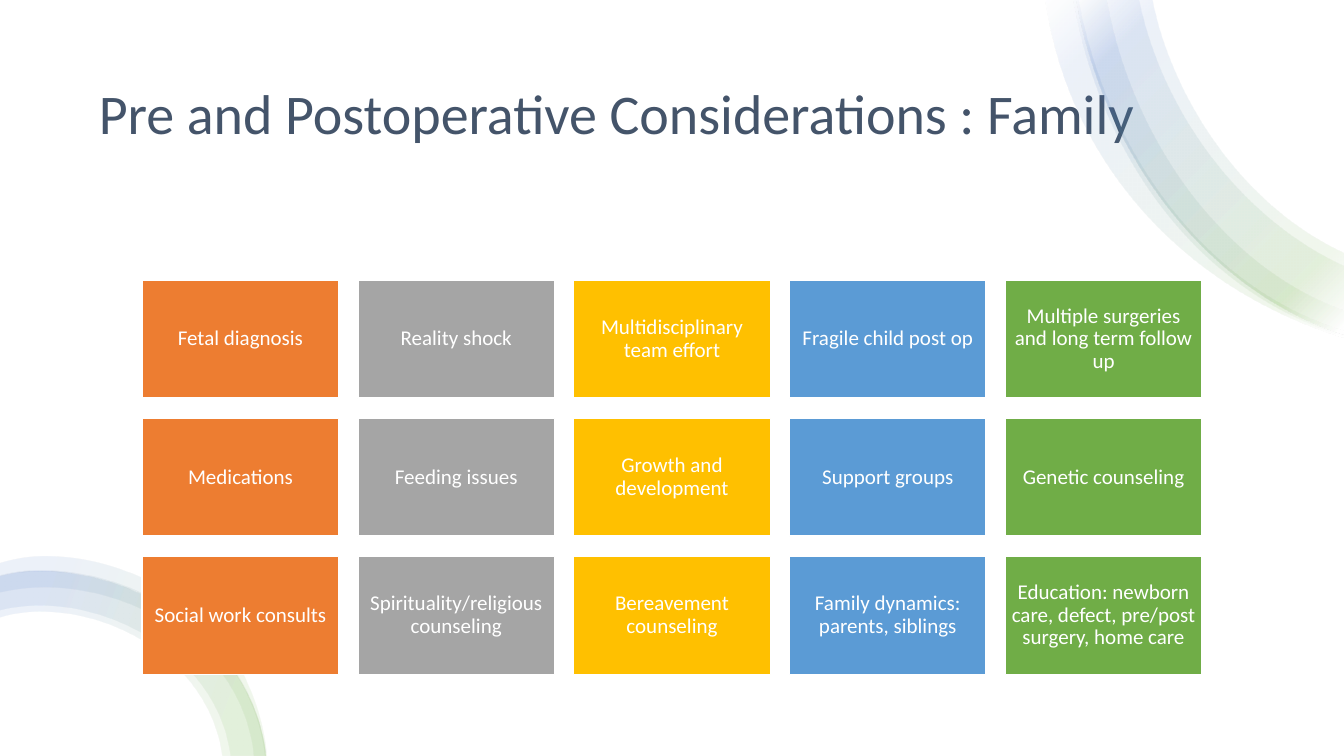
from dataclasses import dataclass

from lxml.etree import SubElement
from pptx import Presentation
from pptx.dml.color import RGBColor
from pptx.enum.shapes import MSO_SHAPE
from pptx.enum.text import MSO_ANCHOR, PP_ALIGN
from pptx.oxml.ns import qn
from pptx.util import Inches, Pt


@dataclass(frozen=True)
class Theme:
    """Colours, fonts and type sizes of the slide."""

    font: str = "Calibri"
    title_size: int = 40
    box_size: int = 15
    title_color: str = "44546A"
    white: str = "FFFFFF"
    columns: tuple = ("ED7D31", "A5A5A5", "FFC000", "5B9BD5", "70AD47")
    fading_stops: tuple = ((2, "FFFFFF"), (16, "70AD47"), (85, "4472C4"), (100, "FFFFFF"))
    plain_stops: tuple = ((16, "70AD47"), (85, "4472C4"))
    ribbon_opacity: int = 10


THEME = Theme()
SLIDE_WIDTH, SLIDE_HEIGHT = 13.33, 7.5
GRID_LEFT, GRID_TOP = 1.41, 2.78
COLUMN_STEP, ROW_STEP = 2.14, 1.37
BOX_WIDTH, BOX_HEIGHT = 1.95, 1.17

CONSIDERATIONS = (
    ("Fetal diagnosis", "Reality shock", "Multidisciplinary team effort",
     "Fragile child post op", "Multiple surgeries and long term follow up"),
    ("Medications", "Feeding issues", "Growth and development",
     "Support groups", "Genetic counseling"),
    ("Social work consults", "Spirituality/religious counseling", "Bereavement counseling",
     "Family dynamics: parents, siblings",
     "Education: newborn care, defect, pre/post surgery, home care"),
)


def crest_edge(start_y, crest, handle_x, bend, end_x):
    """Return two joined curves that rise to a crest and fall to the slide's foot."""
    crest_x, crest_y = crest
    return ((0, start_y), (crest_x / 3, (start_y + 2 * crest_y) / 3),
            (crest_x * 2 / 3, crest_y), crest,
            (handle_x, crest_y), bend, (end_x, SLIDE_HEIGHT))


TOP_EDGE = ((10.68, 0), (10.92, 1.46), (11.93, 2.88), (13.33, 3.32))
TOP_RIBBONS = (
    (((10.37, 0), (10.6, 1.65), (11.79, 2.89), (13.33, 3.35)),
     ((10.7, 0), (10.94, 1.35), (11.84, 2.82), (13.33, 3.28))),
    (TOP_EDGE, ((11.43, 0), (11.63, 1), (12.34, 2.06), (13.33, 2.51))),
    (((10.65, 0), (10.91, 1.55), (11.89, 2.91), (13.33, 3.33)),
     ((10.98, 0), (11.22, 1.35), (12.1, 2.64), (13.33, 3.08))),
    (TOP_EDGE, ((11.3, 0), (11.52, 1.1), (12.3, 2.17), (13.33, 2.64))),
)

BOTTOM_EDGE = crest_edge(5.72, (0.4, 5.67), 1.46, (2.52, 6.44), 2.63)
BOTTOM_RIBBONS = (
    (BOTTOM_EDGE, crest_edge(6.13, (0.4, 6.07), 1.21, (2.08, 6.62), 2.2)),
    (BOTTOM_EDGE, crest_edge(6.06, (0.4, 6.01), 1.24, (2.17, 6.6), 2.28)),
    (crest_edge(5.71, (0.4, 5.66), 1.48, (2.52, 6.42), 2.63),
     crest_edge(5.88, (0.45, 5.83), 1.4, (2.41, 6.48), 2.51)),
    (crest_edge(5.59, (0.45, 5.52), 1.48, (2.52, 6.24), 2.64),
     crest_edge(5.72, (0.4, 5.67), 1.46, (2.51, 6.42), 2.62)),
)


def bend_segments(shape, edge_length):
    """Turn the straight runs along both edges into cubic curves."""
    outline = next(shape.element.iter(qn("a:path")))
    lines = outline.findall(qn("a:lnTo"))
    for edge in (lines[:edge_length - 1], lines[edge_length:]):
        for start in range(0, edge_length - 1, 3):
            curve = SubElement(outline, qn("a:cubicBezTo"))
            edge[start].addprevious(curve)
            for line in edge[start:start + 3]:
                curve.append(line[0])
                outline.remove(line)


def fill_ribbon(shape, stops, angle):
    """Give the shape a translucent gradient."""
    shape.fill.gradient()
    shape.fill.gradient_angle = angle
    stop_list = shape.element.spPr.find(qn("a:gradFill")).find(qn("a:gsLst"))
    for stop in list(stop_list):
        stop_list.remove(stop)
    for position, color in stops:
        stop = SubElement(stop_list, qn("a:gs"), pos=str(position * 1000))
        rgb = SubElement(stop, qn("a:srgbClr"), val=color)
        SubElement(rgb, qn("a:alpha"), val=str(THEME.ribbon_opacity * 1000))


def add_ribbon(slide, outer, inner, stops, angle):
    """Add a curved band between two edges."""
    points = [(Inches(x), Inches(y)) for x, y in outer + inner[::-1]]
    builder = slide.shapes.build_freeform(*points[0])
    builder.add_line_segments(points[1:], close=True)
    shape = builder.convert_to_shape()
    bend_segments(shape, len(outer))
    shape.shadow.inherit = False
    shape.line.fill.background()
    fill_ribbon(shape, stops, angle)


def write_text(shape, text, size, color, alignment):
    """Write one formatted run, centred vertically in the shape."""
    frame = shape.text_frame
    frame.word_wrap = True
    frame.vertical_anchor = MSO_ANCHOR.MIDDLE
    paragraph = frame.paragraphs[0]
    paragraph.alignment = alignment
    paragraph.line_spacing = 0.9
    run = paragraph.add_run()
    run.text = text
    run.font.name = THEME.font
    run.font.size = Pt(size)
    run.font.color.rgb = RGBColor.from_string(color)


def add_title(slide, text):
    """Place and fill the title placeholder."""
    title = slide.shapes.title
    title.left, title.top = Inches(0.88), Inches(0.5)
    title.width, title.height = Inches(11.57), Inches(1.3)
    write_text(title, text, THEME.title_size, THEME.title_color, PP_ALIGN.LEFT)


def add_box(slide, column, row, text):
    """Add one consideration at its grid cell."""
    box = slide.shapes.add_shape(
        MSO_SHAPE.RECTANGLE,
        Inches(GRID_LEFT + column * COLUMN_STEP), Inches(GRID_TOP + row * ROW_STEP),
        Inches(BOX_WIDTH), Inches(BOX_HEIGHT))
    box.shadow.inherit = False
    box.fill.solid()
    box.fill.fore_color.rgb = RGBColor.from_string(THEME.columns[column])
    box.line.color.rgb = RGBColor.from_string(THEME.white)
    box.line.width = Pt(1)
    frame = box.text_frame
    frame.margin_left = frame.margin_right = Inches(0.06)
    frame.margin_top = frame.margin_bottom = Inches(0.06)
    write_text(box, text, THEME.box_size, THEME.white, PP_ALIGN.CENTER)


def main():
    """Build and save the slide."""
    presentation = Presentation()
    presentation.slide_width = Inches(SLIDE_WIDTH)
    presentation.slide_height = Inches(SLIDE_HEIGHT)
    slide = presentation.slides.add_slide(presentation.slide_layouts.get_by_name("Title Only"))
    slide.background.fill.solid()
    slide.background.fill.fore_color.rgb = RGBColor.from_string(THEME.white)
    add_title(slide, "Pre and Postoperative Considerations : Family")
    for outer, inner in TOP_RIBBONS:
        add_ribbon(slide, outer, inner, THEME.fading_stops, 135)
    for outer, inner in BOTTOM_RIBBONS:
        add_ribbon(slide, outer, inner, THEME.plain_stops, 160)
    for row, texts in enumerate(CONSIDERATIONS):
        for column, text in enumerate(texts):
            add_box(slide, column, row, text)
    presentation.save("out.pptx")


if __name__ == "__main__":
    main()
